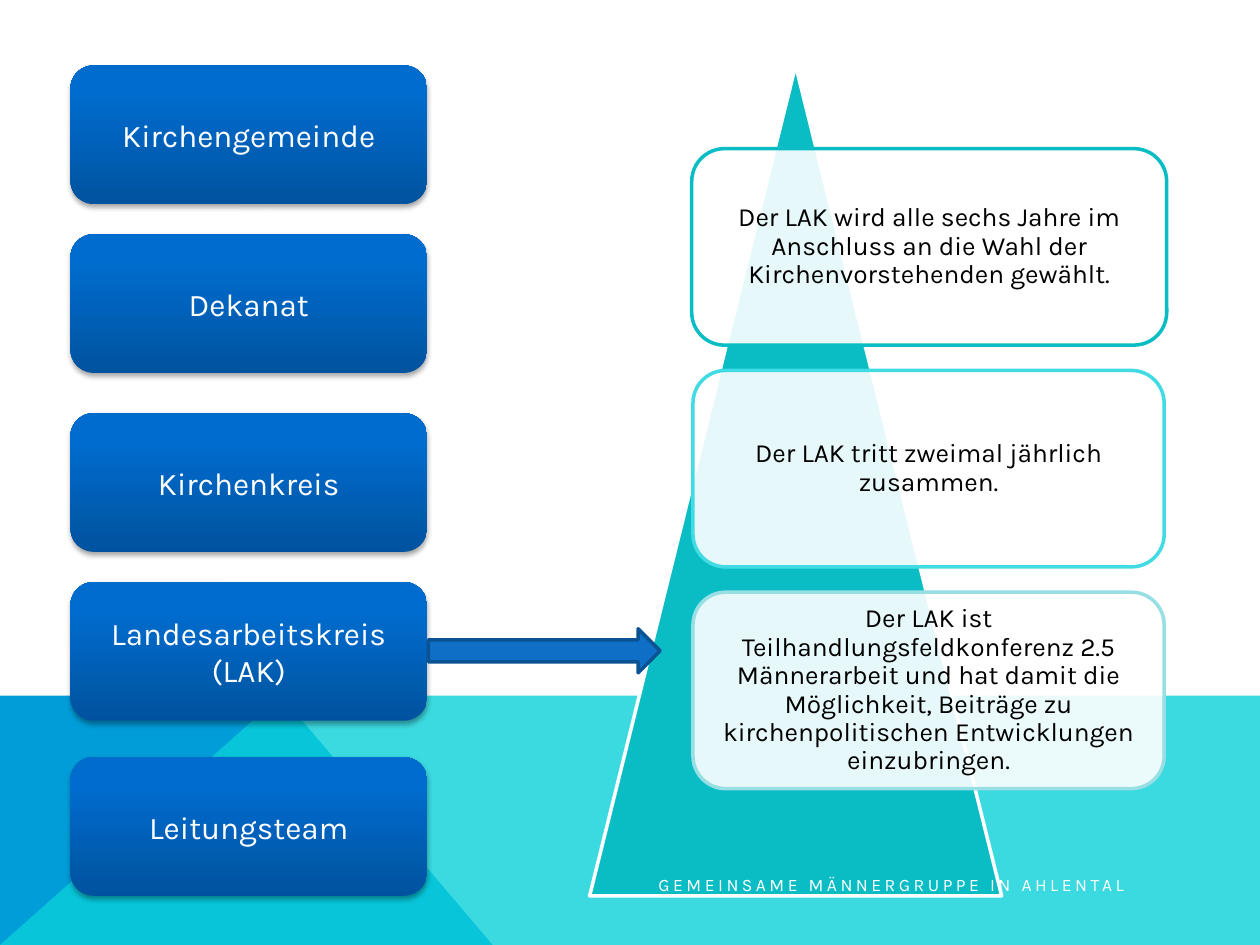
from lxml import etree
from pptx import Presentation
from pptx.dml.color import RGBColor
from pptx.enum.shapes import MSO_SHAPE
from pptx.enum.text import MSO_ANCHOR, PP_ALIGN
from pptx.oxml.ns import qn
from pptx.util import Inches, Pt

ROUNDED = MSO_SHAPE.ROUNDED_RECTANGLE
TRIANGLE = MSO_SHAPE.ISOSCELES_TRIANGLE
ARROW = MSO_SHAPE.RIGHT_ARROW
MIDDLE = MSO_ANCHOR.MIDDLE
CENTER, RIGHT = PP_ALIGN.CENTER, PP_ALIGN.RIGHT

FONT = "Karla"
COLORS = {
    "white": "FFFFFF", "black": "000000",
    "hill_back": "009DD9", "hill_front": "0BD0D9",
    "level_dark": "00539F", "level_mid": "006CCE", "level_light": "006DCF",
    "teal": "0ABDC5", "aqua": "42DBE4", "pale": "97DFE5",
    "arrow": "0F6FC6", "arrow_edge": "0B5292",
}
LEVELS = [  # top edge within the column, lines of text
    (0, ["Kirchengemeinde"]),
    (1.34, ["Dekanat"]),
    (2.76, ["Kirchenkreis"]),
    (4.1, ["Landesarbeitskreis", "(LAK)"]),
    (5.49, ["Leitungsteam"]),
]
FACTS = [  # left edge within the pyramid, width, outline, text
    (0.81, 3.77, "teal", "Der LAK wird alle sechs Jahre im Anschluss an die "
     "Wahl der Kirchenvorstehenden gewählt."),
    (0.82, 3.74, "aqua", "Der LAK tritt zweimal jährlich zusammen."),
    (0.82, 3.74, "pale", "Der LAK ist Teilhandlungsfeldkonferenz 2.5 "
     "Männerarbeit und hat damit die Möglichkeit, Beiträge zu "
     "kirchenpolitischen Entwicklungen einzubringen."),
]


def color(name):
    return RGBColor.from_string(COLORS[name])


def add_child(parent, tag, **attributes):
    return etree.SubElement(parent, qn(tag), {k: str(v) for k, v in attributes.items()})


def paint(shape, fill, line=None, opacity=100):
    """Set a flat fill and an outline, without shadow."""
    shape.shadow.inherit = False
    shape.fill.solid()
    shape.fill.fore_color.rgb = color(fill)
    if opacity < 100:
        tint = shape._element.spPr.find(qn("a:solidFill"))[0]
        add_child(tint, "a:alpha", val=opacity * 1000)
    if line:
        shape.line.color.rgb = color(line)
        shape.line.width = Pt(2)
    else:
        shape.line.fill.background()


def paint_level(shape):
    """Set the three-stop blue gradient and the soft shadow below."""
    shape.shadow.inherit = False
    shape.line.fill.background()
    shape.fill.gradient()
    shape.fill.gradient_angle = 90
    properties = shape._element.spPr
    stops = properties.find(qn("a:gradFill")).find(qn("a:gsLst"))
    for stop in list(stops):
        stops.remove(stop)
    for position, name in [(0, "level_dark"), (80, "level_mid"), (100, "level_light")]:
        stop = add_child(stops, "a:gs", pos=position * 1000)
        add_child(stop, "a:srgbClr", val=COLORS[name])
    shadow = add_child(properties.find(qn("a:effectLst")), "a:outerShdw",
                       blurRad=Pt(3.1), dist=Pt(1.8), dir=90 * 60000, rotWithShape=0)
    tint = add_child(shadow, "a:srgbClr", val=COLORS["black"])
    add_child(tint, "a:alpha", val=35000)


def write(shape, lines, size, ink, align=CENTER, spacing=None, tracking=None):
    frame = shape.text_frame
    frame.word_wrap = True
    frame.vertical_anchor = MIDDLE
    for index, line in enumerate(lines):
        para = frame.add_paragraph() if index else frame.paragraphs[0]
        para.alignment = align
        if spacing:
            para.line_spacing = spacing
        span = para.add_run()
        span.text = line
        span.font.name = FONT
        span.font.size = Pt(size)
        span.font.color.rgb = color(ink)
        if tracking:
            span.font._element.set("spc", str(tracking * 100))


def add_hills(page, left, top, width, height):
    """Two overlapping colour areas along the bottom."""
    peak, foot = left + Inches(2.23), left + Inches(3.91)
    right, bottom = left + width, top + height
    outlines = [
        ([(left, bottom), (left, top), (peak, top), (foot, bottom)], "hill_back", 100),
        ([(left, bottom), (peak, top), (right, top), (right, bottom)], "hill_front", 80),
    ]
    for points, fill, opacity in outlines:
        builder = page.shapes.build_freeform(*points[0], scale=1.0)
        builder.add_line_segments(points[1:], close=True)
        paint(builder.convert_to_shape(), fill, opacity=opacity)


def add_levels(page, left, top, width):
    """Column of organisation levels."""
    for offset, lines in LEVELS:
        box = page.shapes.add_shape(ROUNDED, left, top + Inches(offset), width, Inches(1.1))
        paint_level(box)
        write(box, lines, 18, "white")


def add_pyramid(page, left, top, width, height):
    """Triangle with a stack of facts over its right half."""
    group = page.shapes.add_group_shape()
    paint(group.shapes.add_shape(TRIANGLE, left, top, width, height), "teal", "white")
    fact_height, inset, margin = Inches(1.56), Inches(0.08), Inches(0.06)
    first, step = Inches(0.66), Inches(1.76)
    for index, (offset, fact_width, outline, text) in enumerate(FACTS):
        x = left + Inches(offset)
        y = top + first + step * index
        w = Inches(fact_width)
        card = group.shapes.add_shape(ROUNDED, x, y, w, fact_height)
        paint(card, "white", outline, opacity=90)
        label = group.shapes.add_textbox(x + inset, y + inset, w - 2 * inset,
                                         fact_height - 2 * inset)
        frame = label.text_frame
        frame.margin_left = frame.margin_right = margin
        frame.margin_top = frame.margin_bottom = margin
        write(label, [text], 15, "black", spacing=0.9)


def add_arrow(page, left, top, width, height):
    """Arrow from the LAK level to the pyramid."""
    paint(page.shapes.add_shape(ARROW, left, top, width, height), "arrow", "arrow_edge")


def add_footer(page, left, top, width, height):
    """Name of the association, right-aligned."""
    footer = page.shapes.add_textbox(left, top, width, height)
    write(footer, ["GEMEINSAME MÄNNERGRUPPE IN AHLENTAL"], 10, "white", RIGHT, tracking=2)


def main():
    deck = Presentation()
    deck.slide_width, deck.slide_height = Inches(10), Inches(7.5)
    page = deck.slides.add_slide(deck.slide_layouts[6])
    add_hills(page, Inches(0), Inches(5.52), Inches(10), Inches(1.98))
    add_levels(page, Inches(0.56), Inches(0.52), Inches(2.83))
    add_pyramid(page, Inches(4.68), Inches(0.52), Inches(3.27), Inches(6.59))
    add_arrow(page, Inches(3.4), Inches(4.99), Inches(1.84), Inches(0.35))
    add_footer(page, Inches(3.85), Inches(6.87), Inches(5.17), Inches(0.3))
    deck.save("out.pptx")


if __name__ == "__main__":
    main()
